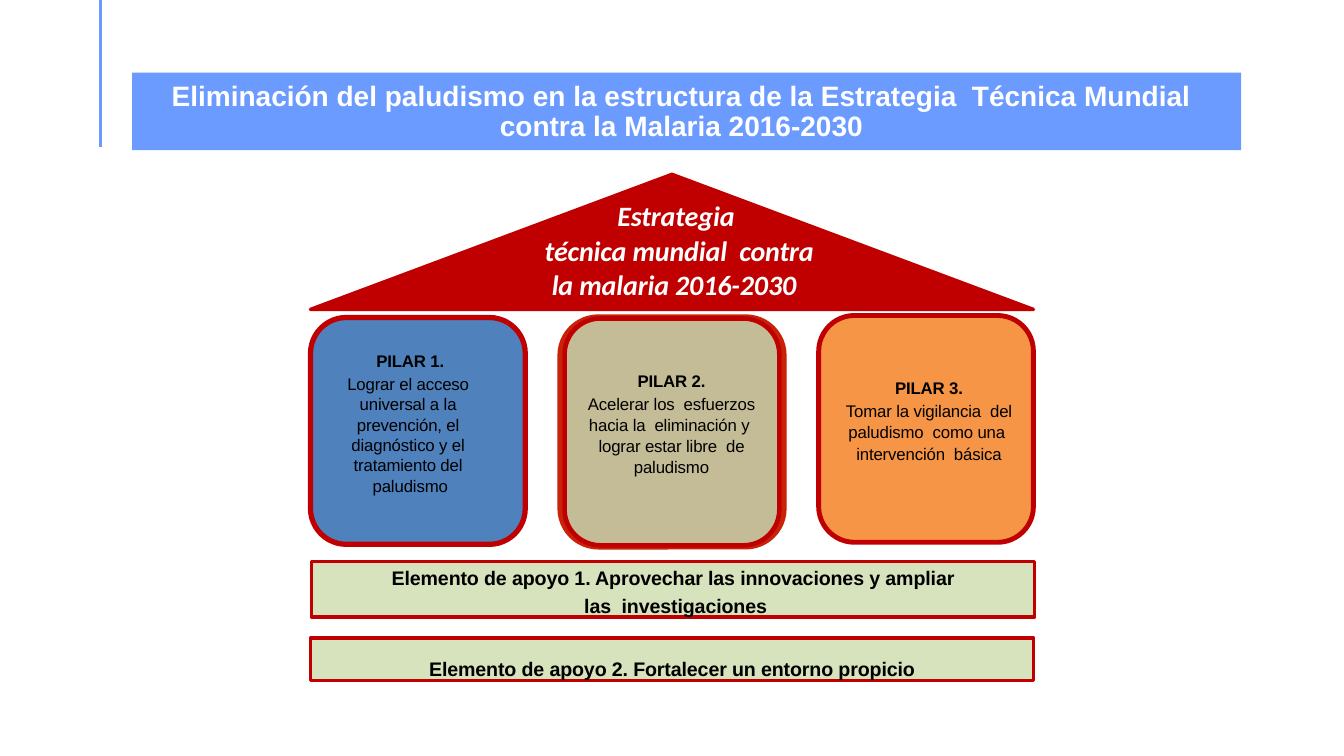
"""Builds a slide showing the malaria strategy as a house with three pillars."""
from lxml import etree
from pptx import Presentation
from pptx.dml.color import RGBColor
from pptx.enum.shapes import MSO_CONNECTOR, MSO_SHAPE
from pptx.enum.text import MSO_ANCHOR, MSO_AUTO_SIZE, PP_ALIGN
from pptx.oxml.ns import qn
from pptx.util import Pt

PX = 9144
RECT = MSO_SHAPE.RECTANGLE
ROUNDED = MSO_SHAPE.ROUNDED_RECTANGLE
TRIANGLE = MSO_SHAPE.ISOSCELES_TRIANGLE
STRAIGHT = MSO_CONNECTOR.STRAIGHT
TOP, MIDDLE = MSO_ANCHOR.TOP, MSO_ANCHOR.MIDDLE
CENTER = PP_ALIGN.CENTER
NO_FIT = MSO_AUTO_SIZE.NONE

SKY = RGBColor(0x6B, 0x9B, 0xFF)
RED = RGBColor(0xC0, 0x00, 0x00)
BRICK = RGBColor(0xC8, 0x22, 0x07)
BLUE = RGBColor(0x4F, 0x81, 0xBC)
SAND = RGBColor(0xC4, 0xBC, 0x96)
ORANGE = RGBColor(0xF7, 0x95, 0x46)
GREEN = RGBColor(0xD6, 0xE3, 0xBC)
WHITE = RGBColor(0xFF, 0xFF, 0xFF)
BLACK = RGBColor(0x00, 0x00, 0x00)

PILLARS = [
    ((308, 315), BLUE, 3.75, (325, 344, 164, 148), "PILAR 1.",
     "Lograr el acceso  universal a la  prevención, el  diagnóstico y el  "
     "tratamiento del  paludismo", 1.01, 1.7),
    ((560, 316), SAND, 3.25, (572, 364, 188, 108), "PILAR 2.",
     "Acelerar los  esfuerzos hacia la  eliminación y  lograr estar libre  "
     "de paludismo", 1.04, 1.1),
    ((812, 313), ORANGE, 3.5, (825, 371, 193, 87), "PILAR 3.",
     "Tomar la vigilancia  del paludismo  como una  intervención  básica",
     1.07, 0.5),
]


def px(*values):
    return [v * PX for v in values]


def write(tf, text, first=False, font="Arial", size=12, color=BLACK, bold=True,
          italic=False, spacing=None, before=None, track=-10, indent=None):
    p = tf.paragraphs[0] if first else tf.add_paragraph()
    p.alignment = CENTER
    if spacing:
        p.line_spacing = spacing
    if before:
        p.space_before = Pt(before)
    if indent:
        pPr = p._p.get_or_add_pPr()
        pPr.set("marL", str(PX))
        pPr.set("indent", str(indent * PX))
    r = p.add_run()
    r.text = text
    r.font.name = font
    r.font.size = Pt(size)
    r.font.bold = bold
    r.font.italic = italic
    r.font.color.rgb = color
    if track:
        r._r.get_or_add_rPr().set("spc", str(track))


class Deck:
    def __init__(self):
        self.prs = Presentation()
        self.prs.slide_width, self.prs.slide_height = px(1333, 750)
        self.s = self.prs.slides.add_slide(self.prs.slide_layouts[5])

    def frame(self, sp, top, anchor=TOP):
        tf = sp.text_frame
        tf.word_wrap = True
        tf.auto_size = NO_FIT
        tf.vertical_anchor = anchor
        tf.margin_left = tf.margin_right = tf.margin_bottom = 0
        tf.margin_top = top * PX
        return tf

    def shape(self, kind, box, fill, line=None, width=2.5):
        sp = self.s.shapes.add_shape(kind, *px(*box))
        sp.shadow.inherit = False
        sp.fill.solid()
        sp.fill.fore_color.rgb = fill
        if line is None:
            sp.line.fill.background()
        else:
            sp.line.color.rgb = line
            sp.line.width = Pt(width)
        return sp

    def title(self, text, band_box, box):
        sp = self.s.shapes.title
        band = self.shape(RECT, band_box, SKY)
        sp.element.addprevious(band.element)
        sp.left, sp.top, sp.width, sp.height = px(*box)
        tf = self.frame(sp, 5, MIDDLE)
        tf.margin_left = tf.margin_right = 10 * PX
        tf.margin_bottom = 5 * PX
        write(tf, text, first=True, size=20, color=WHITE, spacing=0.9, track=0)

    def line(self, ends, color, width):
        c = self.s.shapes.add_connector(STRAIGHT, *px(*ends))
        c.line.color.rgb = color
        c.line.width = Pt(width)
        etree.SubElement(c.element.spPr, qn("a:effectLst"))

    def text_box(self, box, top):
        return self.frame(self.s.shapes.add_textbox(*px(*box)), top)

    def pillar(self, corner, fill, width, text_box, name, goal, spacing, before):
        self.shape(ROUNDED, (*corner, 213, 225), fill, RED, width)
        tf = self.text_box(text_box, 4)
        write(tf, name, first=True)
        write(tf, goal, bold=False, spacing=spacing, before=before)

    def support(self, box, top, lines):
        tf = self.frame(self.shape(RECT, box, GREEN, RED), top)
        for i, text in enumerate(lines):
            write(tf, text, first=i == 0, size=14, spacing=1.03,
                  before=2.5 if i else None)

    def roof(self, box, text_box, lines):
        self.shape(TRIANGLE, box, RED, RED)
        tf = self.text_box(text_box, 1)
        for i, text in enumerate(lines):
            write(tf, text, first=i == 0, font="Calibri", size=20, color=WHITE,
                  italic=True, before=1.1 if i else None, indent=10)


def main():
    deck = Deck()
    deck.title("Eliminación del paludismo en la estructura de la Estrategia  "
               "Técnica Mundial contra la Malaria 2016-2030",
               (131, 72, 1100, 77), (131, 73, 1090, 77))
    deck.line((100, 0, 100, 146), SKY, 2.25)
    deck.shape(ROUNDED, (557, 316, 219, 225), SAND, BRICK, 6)
    for pillar in PILLARS:
        deck.pillar(*pillar)
    deck.support((309, 557, 717, 55), 4,
                 ["Elemento de apoyo 1. Aprovechar las innovaciones y ampliar",
                  " las  investigaciones"])
    deck.support((308, 633, 717, 42), 18,
                 ["Elemento de apoyo 2. Fortalecer un entorno propicio"])
    deck.roof((308, 173, 717, 134), (518, 196, 300, 104),
              ["Estrategia ", "técnica mundial  contra la malaria 2016-2030"])
    deck.prs.save("out.pptx")


if __name__ == "__main__":
    main()
